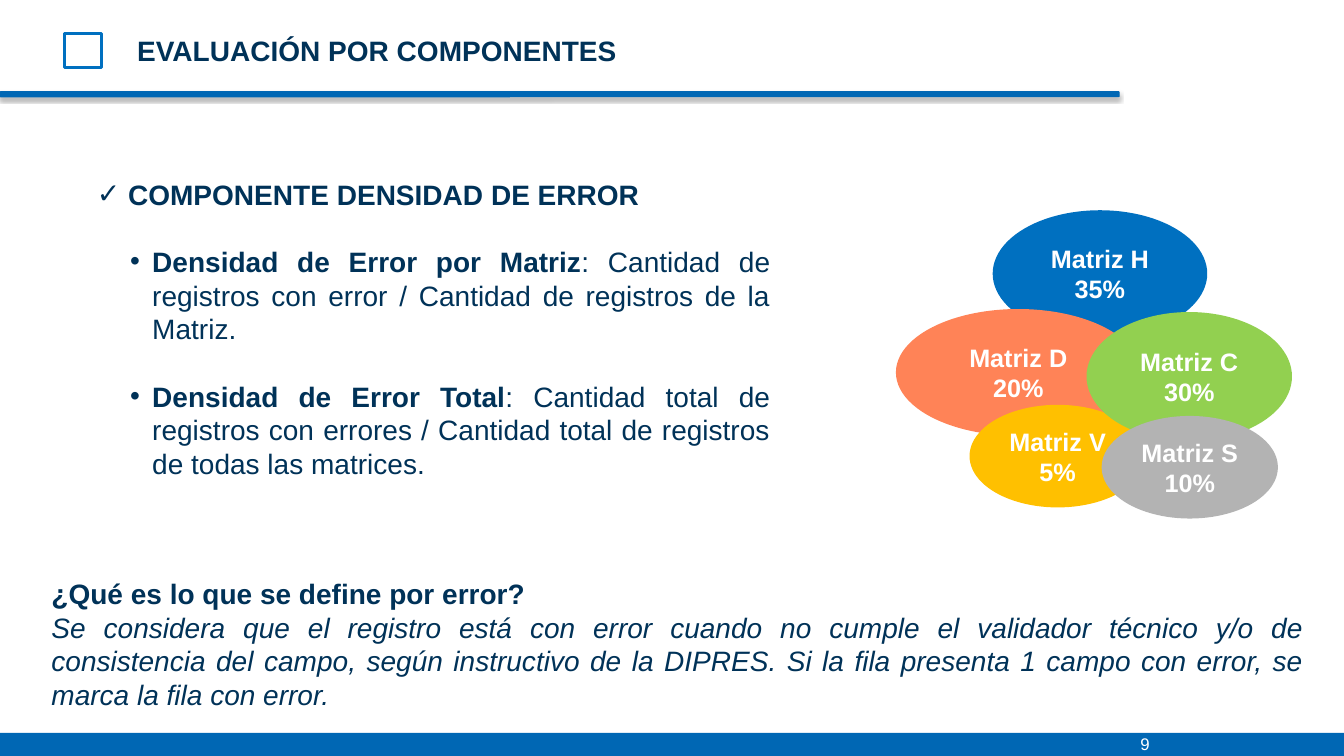
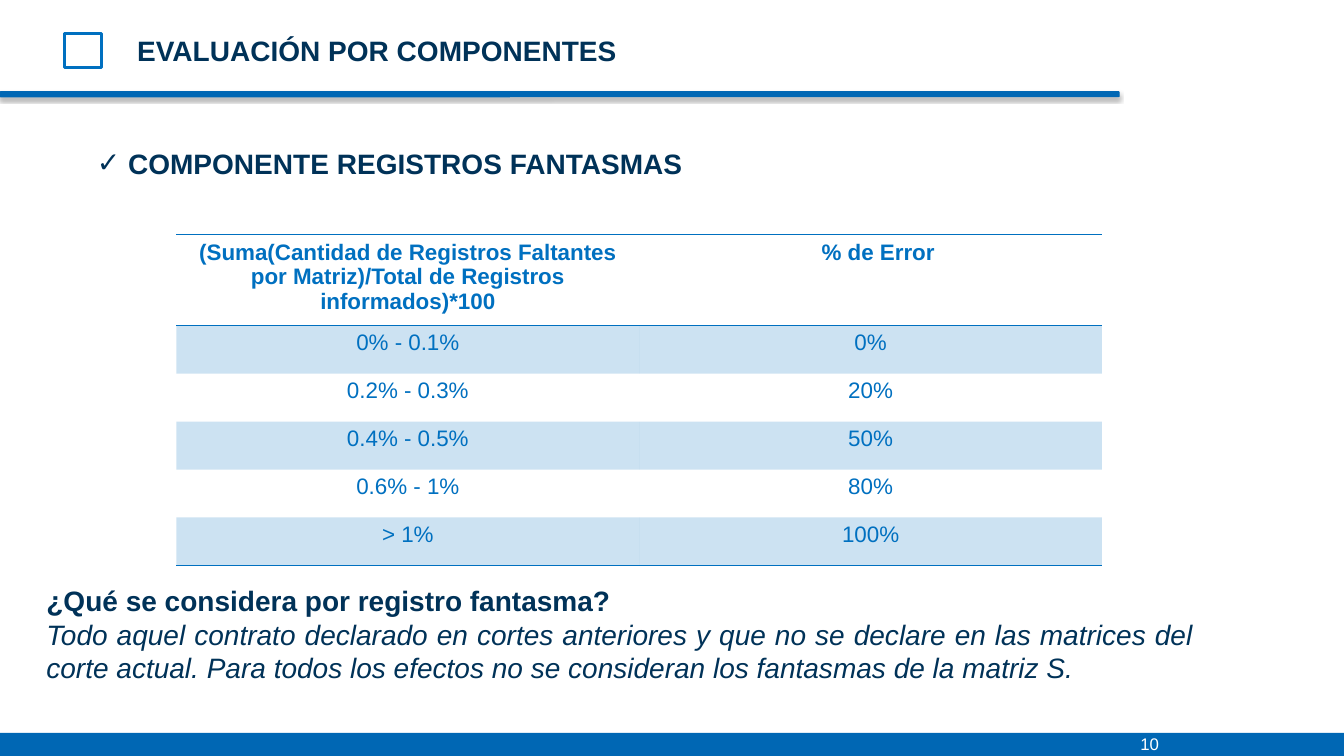
from dataclasses import dataclass
from lxml import etree
from pptx import Presentation
from pptx import util as u
from pptx.dml.color import RGBColor
from pptx.enum import shapes, text
from pptx.oxml import ns

TITLE = "EVALUACIÓN POR COMPONENTES"

ERROR = {
    "page": 9,
    "head": "COMPONENTE DENSIDAD DE ERROR",
    "top": 1.71,
    "points": [
        ("Densidad de Error por Matriz",
         ": Cantidad de registros con error / Cantidad de registros de la Matriz."),
        ("Densidad de Error Total",
         ": Cantidad total de registros con errores / Cantidad total de registros "
         "de todas las matrices."),
    ],
    "ask": "¿Qué es lo que se define por error?",
    "reply": "Se considera que el registro está con error cuando no cumple el validador "
             "técnico y/o de consistencia del campo, según instructivo de la DIPRES. Si la "
             "fila presenta 1 campo con error, se marca la fila con error.",
    "note": (0.46, 5.67, 12.52, 1.45),
}

GHOST = {
    "page": 10,
    "head": "COMPONENTE REGISTROS FANTASMAS",
    "top": 1.4,
    "points": [],
    "ask": "¿Qué se considera por registro fantasma?",
    "reply": "Todo aquel contrato declarado en cortes anteriores y que no se declare en las "
             "matrices del corte actual. Para todos los efectos no se consideran los "
             "fantasmas de la matriz S.",
    "note": (0.41, 5.74, 11.48, 1.11),
}

OVALS = [
    ("Matriz H", "35%", "0070C0", (9.86, 2.1, 2.1, 1.23)),
    ("Matriz D", "20%", "FF8357", (8.9, 3.08, 2.4, 1.23)),
    ("Matriz V", "5%", "FFC000", (9.63, 4.03, 1.72, 0.99)),
    ("Matriz C", "30%", "92D050", (10.79, 3.11, 2.01, 1.25)),
    ("Matriz S", "10%", "B3B3B3", (10.94, 4.14, 1.72, 0.99)),
]

RATES = [
    ("(Suma(Cantidad de Registros Faltantes por Matriz)/Total de Registros informados)*100",
     "% de Error"),
    ("0% - 0.1%", "0%"),
    ("0.2% - 0.3%", "20%"),
    ("0.4% - 0.5%", "50%"),
    ("0.6% - 1%", "80%"),
    ("> 1%", "100%"),
]
GRID = (1.75, 2.33, 9.18, 3.27)
HEADER = 0.89


@dataclass(frozen=True)
class Theme:
    font: str = "Arial"
    ink: str = "003258"
    bar: str = "0067B4"
    blue: str = "0070C0"
    white: str = "FFFFFF"
    body: int = 20
    oval: int = 18
    cell: int = 16
    page: int = 12


T = Theme()
ALIGN = text.PP_ALIGN
SHAPE = shapes.MSO_SHAPE


def inches(box):
    return [u.Inches(n) for n in box]


def node(parent, tag, **attrs):
    item = etree.SubElement(parent, ns.qn("a:" + tag))
    for key, value in attrs.items():
        item.set(key, str(value))
    return item


def write(frame, paras, size=T.body, color=T.ink, align=ALIGN.LEFT, inset=0.05, wrap=True):
    frame.word_wrap = wrap
    frame.margin_left = frame.margin_right = u.Inches(inset)
    frame.margin_top = frame.margin_bottom = u.Inches(inset)
    for n, item in enumerate(paras):
        para = frame.paragraphs[0] if n == 0 else frame.add_paragraph()
        if "bullet" in item:
            mark, left, hang = item["bullet"]
            props = para._p.get_or_add_pPr()
            props.set("marL", str(u.Inches(left)))
            props.set("indent", str(-u.Inches(hang)))
            node(props, "buFont", typeface=T.font)
            node(props, "buChar", char=mark)
        para.alignment = item.get("align", align)
        if "before" in item:
            para.space_before = u.Pt(item["before"])
        for words, style in item["runs"]:
            run = para.add_run()
            run.text = words
            font = run.font
            font.name, font.size = T.font, u.Pt(size)
            font.bold, font.italic = "b" in style, "i" in style
            font.color.rgb = RGBColor.from_string(color)


def line(words, style="", **form):
    return dict(runs=[(words, style)], **form)


def label(slide, box, paras, **form):
    write(slide.shapes.add_textbox(*inches(box)).text_frame, paras, **form)


def draw(slide, kind, box, fill, edge=None, width=2):
    shape = slide.shapes.add_shape(kind, *inches(box))
    shape.shadow.inherit = False
    shape.fill.solid()
    shape.fill.fore_color.rgb = RGBColor.from_string(fill)
    if edge:
        shape.line.color.rgb = RGBColor.from_string(edge)
        shape.line.width = u.Pt(width)
    else:
        shape.line.fill.background()
    return shape


def shade(shape):
    effects = shape._element.spPr.find(ns.qn("a:effectLst"))
    cast = node(effects, "outerShdw", blurRad=u.Pt(3), dist=u.Pt(1.8),
                dir=5400000, rotWithShape=0)
    node(node(cast, "srgbClr", val="000000"), "alpha", val=35000)


def frame(deck, data):
    slide = deck.slides.add_slide(deck.slide_layouts[6])
    rule = draw(slide, SHAPE.ROUNDED_RECTANGLE, (0, 0.91, 11.1, 0.05), T.bar, T.bar, 0.75)
    rule.adjustments[0] = 0.12
    shade(rule)
    draw(slide, SHAPE.RECTANGLE, (0, 7.27, 13.33, 0.23), T.bar)
    draw(slide, SHAPE.RECTANGLE, (0.64, 0.33, 0.37, 0.34), T.white, T.blue)
    label(slide, (1.36, 0.33, 9.94, 0.34), [line(TITLE, "b")], inset=0)
    label(slide, (11.26, 7.23, 0.3, 0.29), [line(str(data["page"]))],
          size=T.page, color=T.white, wrap=False)
    paras = [line(data["head"], "b", bullet=("✓", 0.81, 0.31))]
    for term, rest in data["points"]:
        paras.append(dict(runs=[(term, "b"), (rest, "")], bullet=("•", 1.05, 0.22),
                          align=ALIGN.JUSTIFY, before=T.body * 1.2))
    label(slide, (0.41, data["top"], 7.28, 0.43 + 1.33 * len(data["points"])), paras)
    label(slide, data["note"], [line(data["ask"], "b"),
                                line(data["reply"], "i", align=ALIGN.JUSTIFY)])
    return slide


def ovals(slide):
    for name, share, color, box in OVALS:
        shape = draw(slide, SHAPE.OVAL, box, color, color)
        shape.text_frame.vertical_anchor = text.MSO_ANCHOR.MIDDLE
        write(shape.text_frame, [line(name, "b"), line(share, "b")],
              size=T.oval, color=T.white, align=ALIGN.CENTER)


def border(cell, sides):
    props = cell._tc.get_or_add_tcPr()
    for side in ("lnL", "lnR", "lnT", "lnB"):
        if side in sides:
            edge = node(props, side, w=u.Pt(1))
            node(node(edge, "solidFill"), "srgbClr", val=T.blue)
        else:
            node(node(props, side, w=0), "noFill")


def table(slide):
    rows = len(RATES)
    grid = slide.shapes.add_table(rows, 2, *inches(GRID)).table
    step = (GRID[3] - HEADER) / (rows - 1)
    for r, values in enumerate(RATES):
        grid.rows[r].height = u.Inches(step if r else HEADER)
        sides = {0: ("lnT", "lnB"), 1: ("lnT",), rows - 1: ("lnB",)}.get(r, ())
        for c, words in enumerate(values):
            cell = grid.cell(r, c)
            write(cell.text_frame, [line(words, "" if r else "b")],
                  size=T.cell, color=T.blue, align=ALIGN.CENTER)
            cell.margin_left = u.Inches(0.25 if c and not r else 0.1)
            cell.margin_right = u.Inches(0.1)
            cell.margin_top = cell.margin_bottom = u.Inches(0.05)
            border(cell, sides)
            if r % 2:
                cell.fill.solid()
                cell.fill.fore_color.rgb = RGBColor.from_string(T.blue)
                tint = cell._tc.tcPr.find(ns.qn("a:solidFill"))
                node(tint[0], "alpha", val=20000)
            else:
                cell.fill.background()


def main():
    deck = Presentation()
    deck.slide_width, deck.slide_height = inches((13.33, 7.5))
    ovals(frame(deck, ERROR))
    table(frame(deck, GHOST))
    deck.save("out.pptx")


if __name__ == "__main__":
    main()
